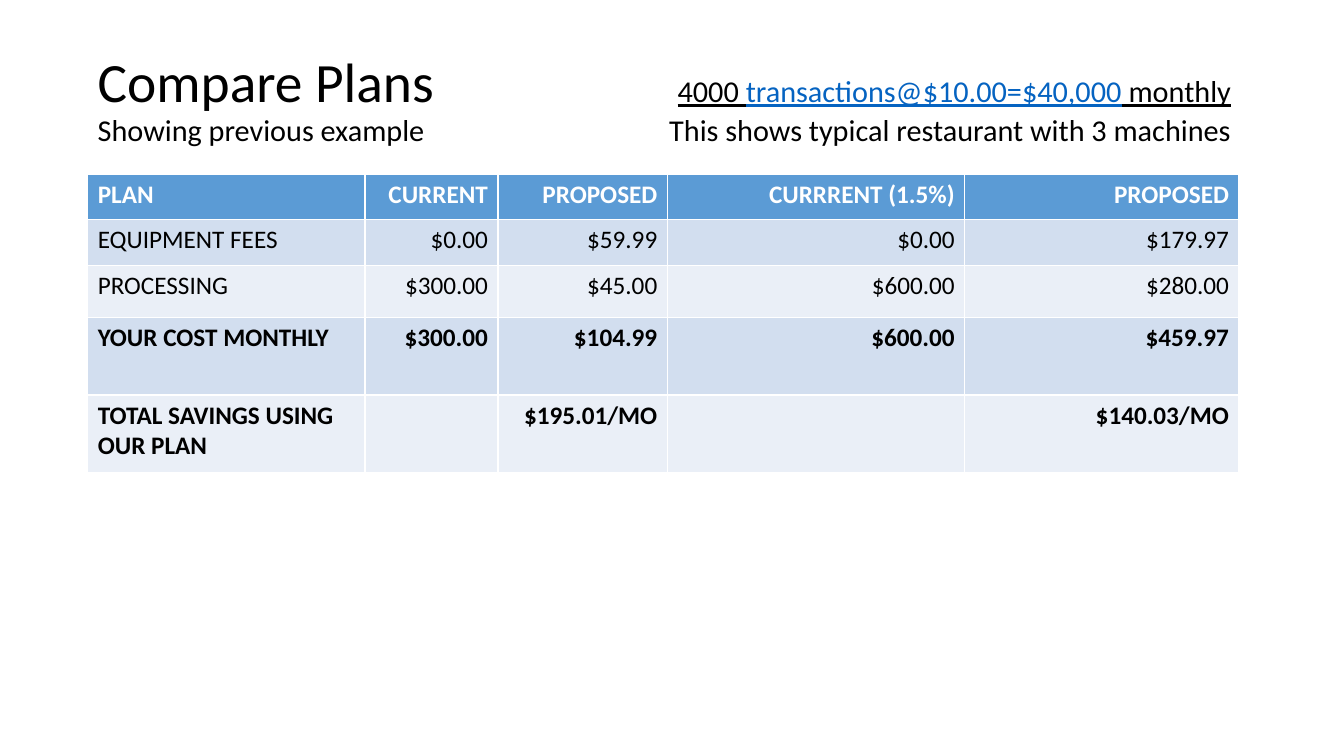
from lxml.etree import SubElement
from pptx import Presentation
from pptx.dml.color import RGBColor
from pptx.enum.text import MSO_ANCHOR as Anchor, PP_ALIGN as Align
from pptx.oxml.ns import qn
from pptx.util import Inches, Pt

THEME = {
    "font": "Calibri",
    "title": Pt(39.6), "subtitle": Pt(21.6), "cell": Pt(18),
    "text": RGBColor.from_string("000000"),
    "link": RGBColor.from_string("0563C1"),
    "header_text": RGBColor.from_string("FFFFFF"),
    "header_fill": RGBColor.from_string("5B9BD5"),
    "bands": [RGBColor.from_string("EAEFF7"), RGBColor.from_string("D2DEEF")],
}
LEFT, TITLE_TOP, TABLE_TOP = Inches(0.87), Inches(0.28), Inches(1.73)
COLUMN_WIDTHS = [2.75, 1.32, 1.68, 2.95, 2.72]
ROW_HEIGHTS = [0.45, 0.45, 0.52, 0.77, 0.77]
BOLD_ROWS = {0, 3, 4}
PLANS = [
    ["PLAN", "CURRENT", "PROPOSED", "CURRRENT (1.5%)", "PROPOSED"],
    ["EQUIPMENT FEES", "$0.00", "$59.99", "$0.00", "$179.97"],
    ["PROCESSING", "$300.00", "$45.00", "$600.00", "$280.00"],
    ["YOUR COST MONTHLY", "$300.00", "$104.99", "$600.00", "$459.97"],
    ["TOTAL SAVINGS USING OUR PLAN", "", "$195.01/MO", "", "$140.03/MO"],
]
# text, size, colour, underline
HEADING = [
    [("Compare Plans", "title", "text", False),
     ("\t", "subtitle", "text", False),
     ("4000 ", "subtitle", "text", True),
     ("transactions@$10.00=$40,000", "subtitle", "link", True),
     (" monthly", "subtitle", "text", True)],
    [("Showing previous example\tThis shows typical restaurant with 3 machines",
      "subtitle", "text", False)],
]

deck = Presentation()
deck.slide_width, deck.slide_height = Inches(13.33), Inches(7.5)
page = deck.slides.add_slide(deck.slide_layouts[6])

# Heading: the right-hand texts end at a right tab stop
box = page.shapes.add_textbox(LEFT, TITLE_TOP, Inches(11.59), TABLE_TOP - TITLE_TOP)
frame = box.text_frame
frame.word_wrap = True
frame.vertical_anchor = Anchor.MIDDLE
for number, line in enumerate(HEADING):
    para = frame.add_paragraph() if number else frame.paragraphs[0]
    para.line_spacing = 0.9
    tabs = SubElement(para._p.get_or_add_pPr(), qn("a:tabLst"))
    SubElement(tabs, qn("a:tab"), pos=str(Inches(11.24)), algn="r")
    para.font.name = THEME["font"]
    for text, size, colour, underline in line:
        span = para.add_run()
        span.text = text
        span.font.size = THEME[size]
        span.font.color.rgb = THEME[colour]
        span.font.underline = underline

# Plan table
table = page.shapes.add_table(
    len(ROW_HEIGHTS), len(COLUMN_WIDTHS), LEFT, TABLE_TOP,
    Inches(sum(COLUMN_WIDTHS)), Inches(sum(ROW_HEIGHTS))).table
for column, width in zip(table.columns, COLUMN_WIDTHS):
    column.width = Inches(width)
for row, height in zip(table.rows, ROW_HEIGHTS):
    row.height = Inches(height)
for row_number, plan_row in enumerate(PLANS):
    is_header = row_number == 0
    for column_number, text in enumerate(plan_row):
        cell = table.cell(row_number, column_number)
        cell.text = text
        cell.fill.solid()
        cell.fill.fore_color.rgb = (
            THEME["header_fill"] if is_header else THEME["bands"][row_number % 2])
        para = cell.text_frame.paragraphs[0]
        para.alignment = Align.RIGHT if column_number else Align.LEFT
        para.font.name = THEME["font"]
        para.font.size = THEME["cell"]
        para.font.bold = row_number in BOLD_ROWS
        para.font.color.rgb = THEME["header_text" if is_header else "text"]

deck.save("out.pptx")
